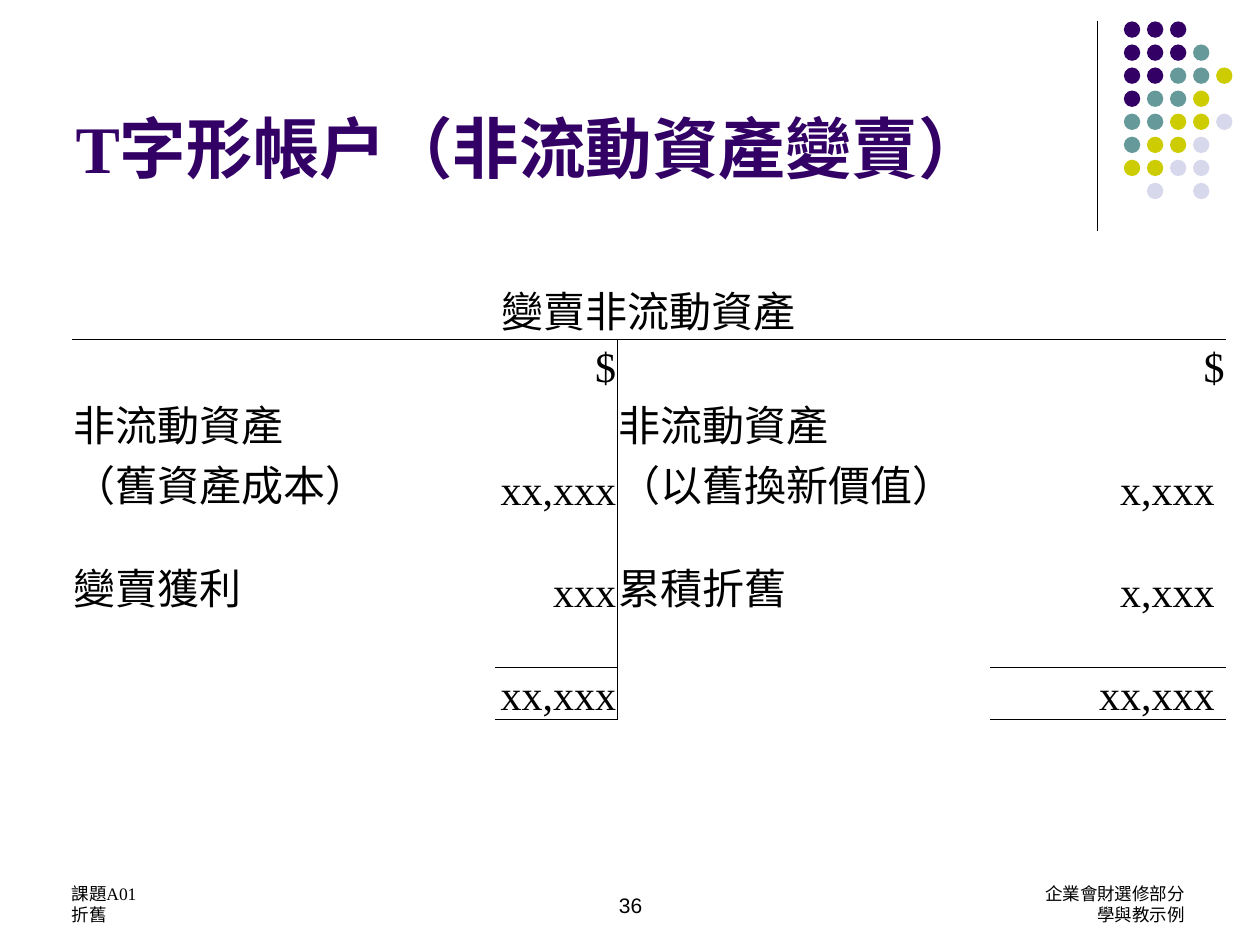
from lxml import etree
from pptx import Presentation
from pptx.dml.color import RGBColor
from pptx.enum.shapes import MSO_CONNECTOR, MSO_SHAPE
from pptx.enum.text import MSO_ANCHOR, MSO_AUTO_SIZE, PP_ALIGN
from pptx.oxml.ns import qn
from pptx.util import Inches, Pt

LEFT, CENTER, RIGHT = PP_ALIGN.LEFT, PP_ALIGN.CENTER, PP_ALIGN.RIGHT
TOP, BOTTOM = MSO_ANCHOR.TOP, MSO_ANCHOR.BOTTOM
NO_AUTOFIT = MSO_AUTO_SIZE.NONE
STRAIGHT, OVAL = MSO_CONNECTOR.STRAIGHT, MSO_SHAPE.OVAL

SERIF, SANS, CHINESE = "Times New Roman", "Arial", "Noto Sans CJK TC"
BLACK, PURPLE = "000000", "330066"
DOT_COLORS = {"P": PURPLE, "T": "669999", "Y": "CCCC00", "L": "D8D8EC"}
DOT_ROWS = ["PPP", "PPPT", "PPTTY", "PTTY", "TTYYL", "TYYL", "YYLL", " L L"]

COLUMN_WIDTHS = [3.36, 0.97, 2.96, 1.87]
ROW_HEIGHTS = [0.41, 0.41, 0.81, 0.81, 0.41, 0.41, 0.21]
ENTRIES = [
    ["變賣非流動資產", "", "", ""],
    ["", "$", "", "$"],
    ["非流動資產\n（舊資產成本）", "xx,xxx", "非流動資產\n（以舊換新價值）", "x,xxx"],
    ["變賣獲利", "xxx", "累積折舊", "x,xxx"],
    ["", "", "", ""],
    ["", "xx,xxx", "", "xx,xxx"],
    ["", "", "", ""],
]
AMOUNT_COLUMNS = (1, 3)
RULED_BELOW = {0: (0, 1, 2, 3), 4: AMOUNT_COLUMNS, 5: AMOUNT_COLUMNS}


def color(value):
    return RGBColor.from_string(value)


def add_run(para, text, size, font=SERIF, fill=BLACK, bold=False):
    span = para.add_run()
    span.text = text
    span.font.size = Pt(size)
    span.font.name = font
    span.font.bold = bold
    span.font.color.rgb = color(fill)
    east_asian = etree.SubElement(span.font._element, qn("a:ea"))
    east_asian.set("typeface", CHINESE)


def add_title(page, left, top, width, height):
    title = page.shapes.title
    title.left, title.top = Inches(left), Inches(top)
    title.width, title.height = Inches(width), Inches(height)
    frame = title.text_frame
    frame.auto_size = NO_AUTOFIT
    frame.vertical_anchor = TOP
    para = frame.paragraphs[0]
    para.alignment = LEFT
    add_run(para, "T", 38, SERIF, PURPLE, True)
    add_run(para, "字形帳戶（非流動資產變賣）", 38, SANS, PURPLE, True)


def add_corner_ornament(page, left, top, height):
    """Vertical rule with a grid of coloured dots to its right."""
    rule = page.shapes.add_connector(
        STRAIGHT, Inches(left), Inches(top), Inches(left), Inches(top + height))
    rule.line.color.rgb = color(BLACK)
    rule.line.width = Pt(0.75)
    etree.SubElement(rule._element.spPr, qn("a:effectLst"))

    dots = page.shapes.add_group_shape()
    pitch, size, offset = 0.183, 0.13, 0.21
    for row, codes in enumerate(DOT_ROWS):
        for column, code in enumerate(codes):
            if code == " ":
                continue
            dot = dots.shapes.add_shape(
                OVAL, Inches(left + offset + column * pitch),
                Inches(top + row * pitch), Inches(size), Inches(size))
            dot.shadow.inherit = False
            dot.fill.solid()
            dot.fill.fore_color.rgb = color(DOT_COLORS[code])
            dot.line.fill.background()


def set_borders(cell, ruled_sides):
    """Rule the named sides (L, R, T, B) and clear the others."""
    properties = cell._tc.get_or_add_tcPr()
    for position, side in enumerate("LRTB"):
        line = etree.Element(qn(f"a:ln{side}"), w=str(Pt(0.5)))
        if side in ruled_sides:
            fill = etree.SubElement(line, qn("a:solidFill"))
            etree.SubElement(fill, qn("a:srgbClr"), val=BLACK)
        else:
            etree.SubElement(line, qn("a:noFill"))
        properties.insert(position, line)


def ruled_sides_at(row, column):
    sides = ""
    if 1 <= row <= 5 and column in (1, 2):
        sides += "R" if column == 1 else "L"
    if column in RULED_BELOW.get(row - 1, ()):
        sides += "T"
    if column in RULED_BELOW.get(row, ()):
        sides += "B"
    return sides


def fill_cell(cell, row, column, text):
    cell.fill.background()
    set_borders(cell, ruled_sides_at(row, column))
    cell.vertical_anchor = BOTTOM
    cell.margin_left = cell.margin_right = cell.margin_top = Inches(0.01)
    cell.margin_bottom = 0
    if column == 3 and row > 1:
        cell.margin_right = Inches(0.09)
    para = cell.text_frame.paragraphs[0]
    if row == 0:
        para.alignment = CENTER
    else:
        para.alignment = RIGHT if column in AMOUNT_COLUMNS else LEFT
    if not text:
        return
    for index, part in enumerate(text.split("\n")):
        if index:
            para.add_line_break()
        add_run(para, part, 24)


def add_account(page, left, top):
    table = page.shapes.add_table(
        len(ROW_HEIGHTS), len(COLUMN_WIDTHS), Inches(left), Inches(top),
        Inches(sum(COLUMN_WIDTHS)), Inches(sum(ROW_HEIGHTS))).table
    table.first_row = table.horz_banding = False
    for column, width in zip(table.columns, COLUMN_WIDTHS):
        column.width = Inches(width)
    for row, height in zip(table.rows, ROW_HEIGHTS):
        row.height = Inches(height)
    table.cell(0, 0).merge(table.cell(0, 3))
    for row, texts in enumerate(ENTRIES):
        for column, text in enumerate(texts):
            fill_cell(table.cell(row, column), row, column, text)


def add_footer(page, left, top, width, height, inset, alignment, size, lines):
    """Each line is a list of (text, font) pairs."""
    box = page.shapes.add_textbox(
        Inches(left), Inches(top), Inches(width), Inches(height))
    frame = box.text_frame
    frame.word_wrap = True
    frame.margin_top = Inches(inset)
    for index, parts in enumerate(lines):
        para = frame.add_paragraph() if index else frame.paragraphs[0]
        para.alignment = alignment
        for text, font in parts:
            add_run(para, text, size, font)


def main():
    deck = Presentation()
    deck.slide_width, deck.slide_height = Inches(10), Inches(7.5)
    page = deck.slides.add_slide(deck.slide_layouts[5])
    add_corner_ornament(page, 8.71, 0.17, 1.66)
    add_title(page, 0.5, 0.8, 8.25, 1.42)
    add_account(page, 0.57, 2.2)
    add_footer(page, 0.47, 6.8, 2.33, 0.5, 0.21, LEFT, 10,
               [[("課題A01", SERIF)], [("折舊", SERIF)]])
    add_footer(page, 3.42, 6.83, 3.17, 0.5, 0.25, CENTER, 12, [[("36", SANS)]])
    add_footer(page, 5.79, 6.8, 3.71, 0.5, 0.21, RIGHT, 10,
               [[("企業會財", SANS), ("選修部分", CHINESE)],
                [("學與教示例", SANS)]])
    deck.save("out.pptx")


if __name__ == "__main__":
    main()
